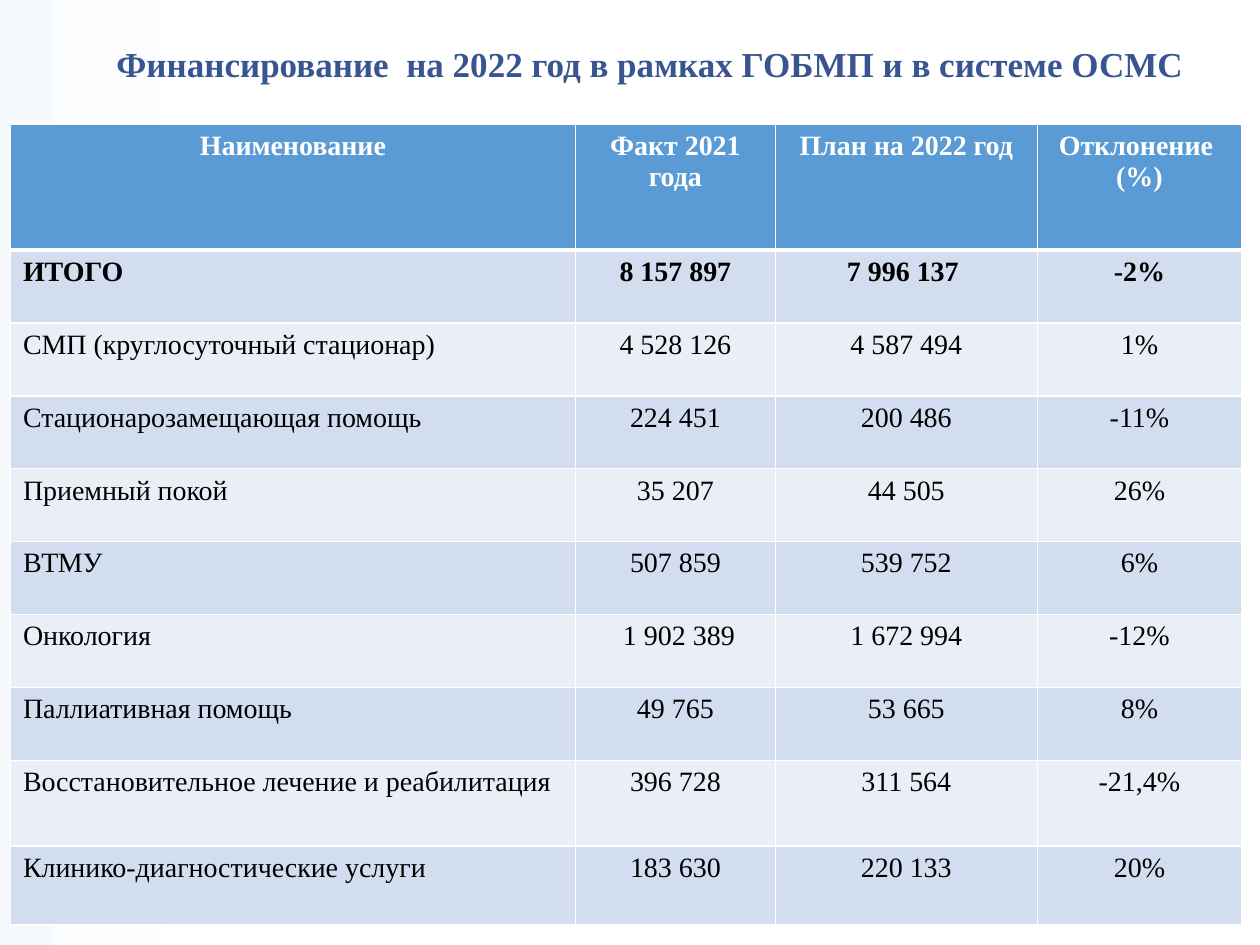
from lxml import etree
from pptx import Presentation
from pptx import util as u
from pptx.dml.color import RGBColor
from pptx.enum import shapes, text
from pptx.oxml.ns import qn

COLORS = {
    "title": "385592", "header": "5B9BD5", "odd": "D2DEEF", "even": "EAEFF7",
    "white": "FFFFFF", "black": "000000", "tint": "F7FAFD",
}
HEADER = ["Наименование", "Факт 2021 года", "План на 2022 год", "Отклонение  (%)"]
ROWS = [
    ["ИТОГО", "8 157 897", "7 996 137 ", "-2%"],
    ["СМП (круглосуточный стационар)", "4 528 126", "4 587 494", "1%"],
    ["Стационарозамещающая помощь", "224 451", "200 486", "-11%"],
    ["Приемный покой", "35 207", "44 505", "26%"],
    ["ВТМУ", "507 859", "539 752", "6%"],
    ["Онкология", " 1 902 389", "1 672 994", "-12%"],
    ["Паллиативная помощь", "49 765", "53 665", "8%"],
    ["Восстановительное лечение и реабилитация", "396 728", "311 564", "-21,4%"],
    ["Клинико-диагностические услуги", "183 630", "220 133", "20%"],
]
COL_WIDTHS = [11.39, 4.03, 5.28, 4.12]
ROW_HEIGHTS = [2.53] + [1.47] * 7 + [1.73, 1.59]


def rgb(name):
    return RGBColor.from_string(COLORS[name])


def write(tf, value, size=16, color="black", bold=False, center=True, spacing=None):
    p = tf.paragraphs[0]
    p.alignment = text.PP_ALIGN.CENTER if center else text.PP_ALIGN.LEFT
    if spacing:
        p.line_spacing = spacing
    r = p.add_run()
    r.text = value
    r.font.name = "Times New Roman"
    r.font.size = u.Pt(size)
    r.font.bold = bold
    r.font.color.rgb = rgb(color)


class SlideBuilder:
    def __init__(self, slide):
        self.s = slide

    def side_band(self, width, height):
        sp = self.s.shapes.add_shape(
            shapes.MSO_SHAPE.RECTANGLE, 0, 0, u.Cm(width), u.Cm(height))
        sp.shadow.inherit = False
        sp.line.fill.background()
        sp.fill.gradient()
        sp.fill.gradient_angle = 0
        for stop, color, position in zip(sp.fill.gradient_stops, ("tint", "white"), (0, 1)):
            stop.color.rgb = rgb(color)
            stop.position = position

    def title(self, value, *box):
        tf = self.s.shapes.add_textbox(*map(u.Cm, box)).text_frame
        tf.word_wrap = True
        tf.vertical_anchor = text.MSO_ANCHOR.MIDDLE
        write(tf, value, size=20, color="title", bold=True, spacing=0.9)

    def borders(self, cell, **widths):
        tc_pr = cell._tc.get_or_add_tcPr()
        for side in "LRTB":
            ln = etree.SubElement(tc_pr, qn(f"a:ln{side}"), w=str(u.Pt(widths.get(side, 1))))
            fill = etree.SubElement(ln, qn("a:solidFill"))
            etree.SubElement(fill, qn("a:srgbClr"), val=COLORS["white"])

    def table(self, rows, left, top):
        tbl = self.s.shapes.add_table(
            len(rows), len(COL_WIDTHS), u.Cm(left), u.Cm(top),
            u.Cm(sum(COL_WIDTHS)), u.Cm(sum(ROW_HEIGHTS))).table
        for col, width in zip(tbl.columns, COL_WIDTHS):
            col.width = u.Cm(width)
        for row, height in zip(tbl.rows, ROW_HEIGHTS):
            row.height = u.Cm(height)
        for i, values in enumerate(rows):
            head = i == 0
            fill = "header" if head else "odd" if i % 2 else "even"
            # A thick rule parts the header from the body
            widths = {0: {"B": 3}, 1: {"T": 3}}.get(i, {})
            for j, value in enumerate(values):
                cell = tbl.cell(i, j)
                self.borders(cell, **widths)
                cell.fill.solid()
                cell.fill.fore_color.rgb = rgb(fill)
                write(cell.text_frame, value, color="white" if head else "black",
                      bold=i < 2, center=head or j > 0)


def main():
    prs = Presentation()
    prs.slide_width, prs.slide_height = u.Cm(25.4), u.Cm(19.05)
    page = SlideBuilder(prs.slides.add_slide(prs.slide_layouts[6]))

    # Background band
    page.side_band(4.37, 19.05)
    # Heading
    page.title("Финансирование  на 2022 год в рамках ГОБМП и в системе ОСМС",
               1.37, 0.15, 23.47, 2.36)
    # Funding table
    page.table([HEADER] + ROWS, 0.21, 2.51)
    prs.save("out.pptx")


if __name__ == "__main__":
    main()
